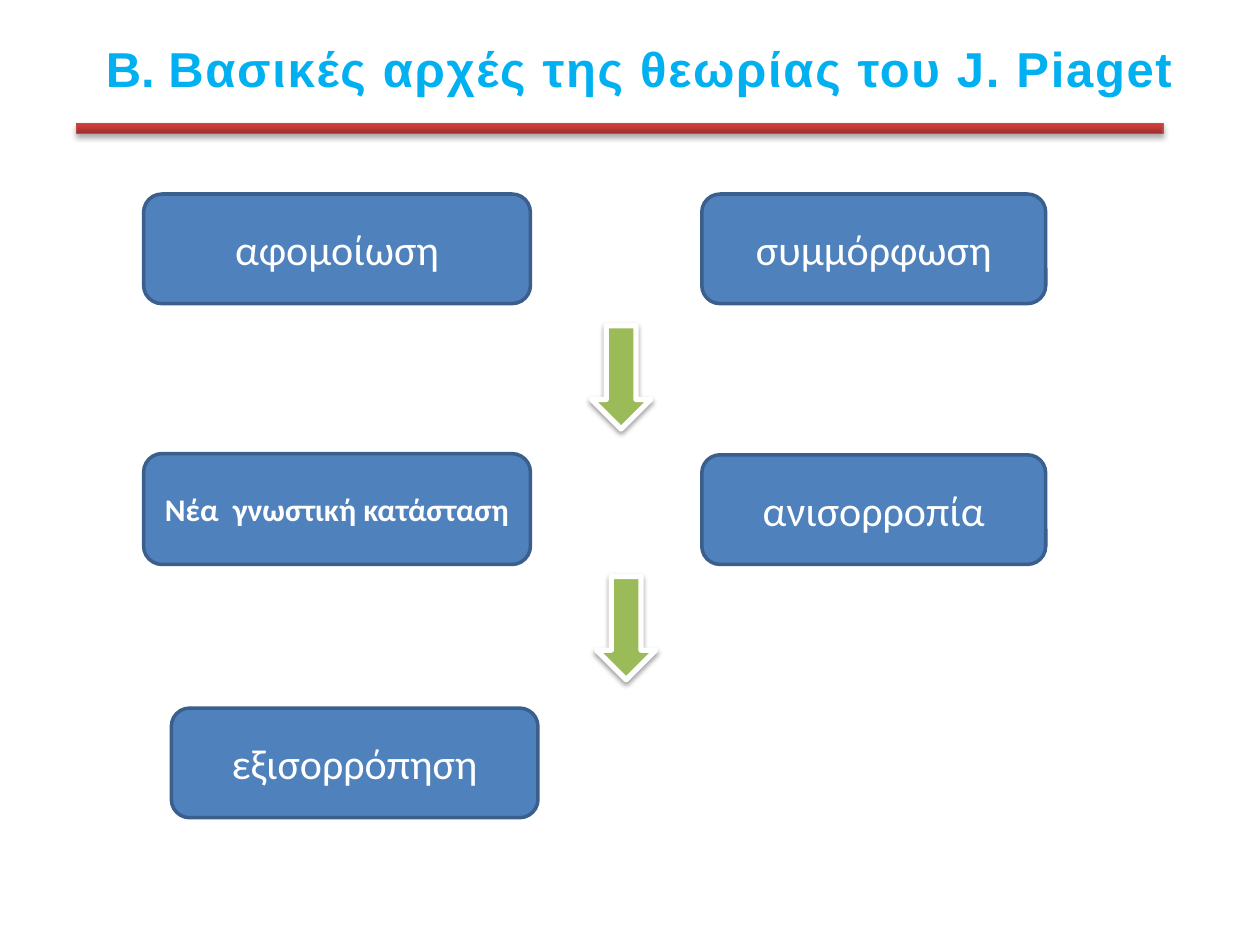
import copy

import pptx
import pptx.dml.color
import pptx.enum.shapes
import pptx.enum.text
import pptx.oxml
import pptx.oxml.ns
import pptx.util

Inches, Pt = pptx.util.Inches, pptx.util.Pt
qn = pptx.oxml.ns.qn
MSO_SHAPE = pptx.enum.shapes.MSO_SHAPE
PP_ALIGN = pptx.enum.text.PP_ALIGN
MSO_ANCHOR = pptx.enum.text.MSO_ANCHOR

# Stage name, left, top, width, height, size, bold
STAGES = [
    ("Νέα  γνωστική κατάσταση", 1.14, 3.6, 3.07, 0.88, 18, True),
    ("ανισορροπία", 5.57, 3.61, 2.73, 0.87, 24, False),
    ("συμμόρφωση", 5.57, 1.54, 2.73, 0.87, 24, False),
    ("αφομοίωση", 1.14, 1.54, 3.07, 0.87, 24, False),
    ("εξισορρόπηση", 1.36, 5.62, 2.91, 0.87, 24, False),
]


def rgb(value):
    return pptx.dml.color.RGBColor.from_string(value)


def add_shadow(sp, opacity, distance):
    """Give the shape a soft black shadow falling straight down."""
    effects = sp._element.spPr.find(qn("a:effectLst"))
    effects.append(pptx.oxml.parse_xml(
        f'<a:outerShdw {pptx.oxml.ns.nsdecls("a")} blurRad="{Pt(3.1)}" '
        f'dist="{Pt(distance)}" dir="5400000" rotWithShape="0">'
        f'<a:srgbClr val="000000"><a:alpha val="{opacity * 1000}"/></a:srgbClr>'
        '</a:outerShdw>'))


class SlideBuilder:
    heading_font, body_font = "Arial", "Calibri"
    accent, box_fill, box_line = "00B0F0", "4F81BD", "3A5F8C"
    arrow_fill, white = "9BBB59", "FFFFFF"
    rule_line = "BF4C48"
    rule_stops = [(0, "9C2F2D"), (0.8, "CB3E3A"), (1, "CE3B37")]

    def __init__(self, slide):
        self.slide = slide

    def title(self, number, text, left, top, width, height):
        sp = self.slide.shapes.title
        sp.left, sp.top = Inches(left), Inches(top)
        sp.width, sp.height = Inches(width), Inches(height)
        tf = sp.text_frame
        tf.word_wrap = True
        tf.auto_size = pptx.enum.text.MSO_AUTO_SIZE.NONE
        tf.vertical_anchor = MSO_ANCHOR.BOTTOM
        p = tf.paragraphs[0]
        p.alignment = PP_ALIGN.LEFT
        p.line_spacing = 1.5
        pPr = p._p.get_or_add_pPr()
        pPr.set("marL", str(Inches(0.56)))
        pPr.set("indent", str(-Inches(0.56)))
        p.font.name, p.font.size, p.font.bold = self.heading_font, Pt(28), True
        p.font.color.rgb = rgb(self.accent)
        p.add_run().text = number
        r = p.add_run()
        r.text = text
        r._r.get_or_add_rPr().set("spc", "100")

    def shape(self, kind, left, top, width, height, line, line_width):
        sp = self.slide.shapes.add_shape(
            kind, Inches(left), Inches(top), Inches(width), Inches(height))
        sp.shadow.inherit = False
        sp.line.color.rgb = rgb(line)
        sp.line.width = Pt(line_width)
        return sp

    def rule(self, left, top, width, height):
        sp = self.shape(MSO_SHAPE.RECTANGLE, left, top, width, height,
                        self.rule_line, 0.75)
        sp.fill.gradient()
        sp.fill.gradient_angle = 90
        stop_list = sp._element.spPr.find(".//" + qn("a:gsLst"))
        stop_list.append(copy.deepcopy(stop_list[-1]))
        for stop, (position, color) in zip(sp.fill.gradient_stops, self.rule_stops):
            stop.position = position
            stop.color.rgb = rgb(color)
        add_shadow(sp, 35, 1.8)

    def stage(self, text, left, top, width, height, size, bold):
        sp = self.shape(MSO_SHAPE.ROUNDED_RECTANGLE, left, top, width, height,
                        self.box_line, 2)
        sp.fill.solid()
        sp.fill.fore_color.rgb = rgb(self.box_fill)
        tf = sp.text_frame
        tf.word_wrap = True
        tf.vertical_anchor = MSO_ANCHOR.MIDDLE
        p = tf.paragraphs[0]
        p.text = text
        p.alignment = PP_ALIGN.CENTER
        p.font.name, p.font.size, p.font.bold = self.body_font, Pt(size), bold
        p.font.color.rgb = rgb(self.white)

    def down_arrow(self, left, top):
        sp = self.shape(MSO_SHAPE.LEFT_ARROW, left, top, 0.82, 0.47, self.white, 3)
        sp.rotation = 270
        sp.fill.solid()
        sp.fill.fore_color.rgb = rgb(self.arrow_fill)
        add_shadow(sp, 38, 1.6)


def main():
    prs = pptx.Presentation()
    prs.slide_width, prs.slide_height = Inches(10), Inches(7.5)
    s = SlideBuilder(prs.slides.add_slide(prs.slide_layouts[5]))
    s.title("Β. ", "Βασικές αρχές της θεωρίας του J. Piaget", 0.74, 0.12, 9.14, 0.7)
    s.rule(0.61, 0.98, 8.62, 0.08)
    for stage in STAGES:
        s.stage(*stage)
    for left, top in [(4.52, 2.76), (4.56, 4.75)]:
        s.down_arrow(left, top)
    prs.save("out.pptx")


if __name__ == "__main__":
    main()
